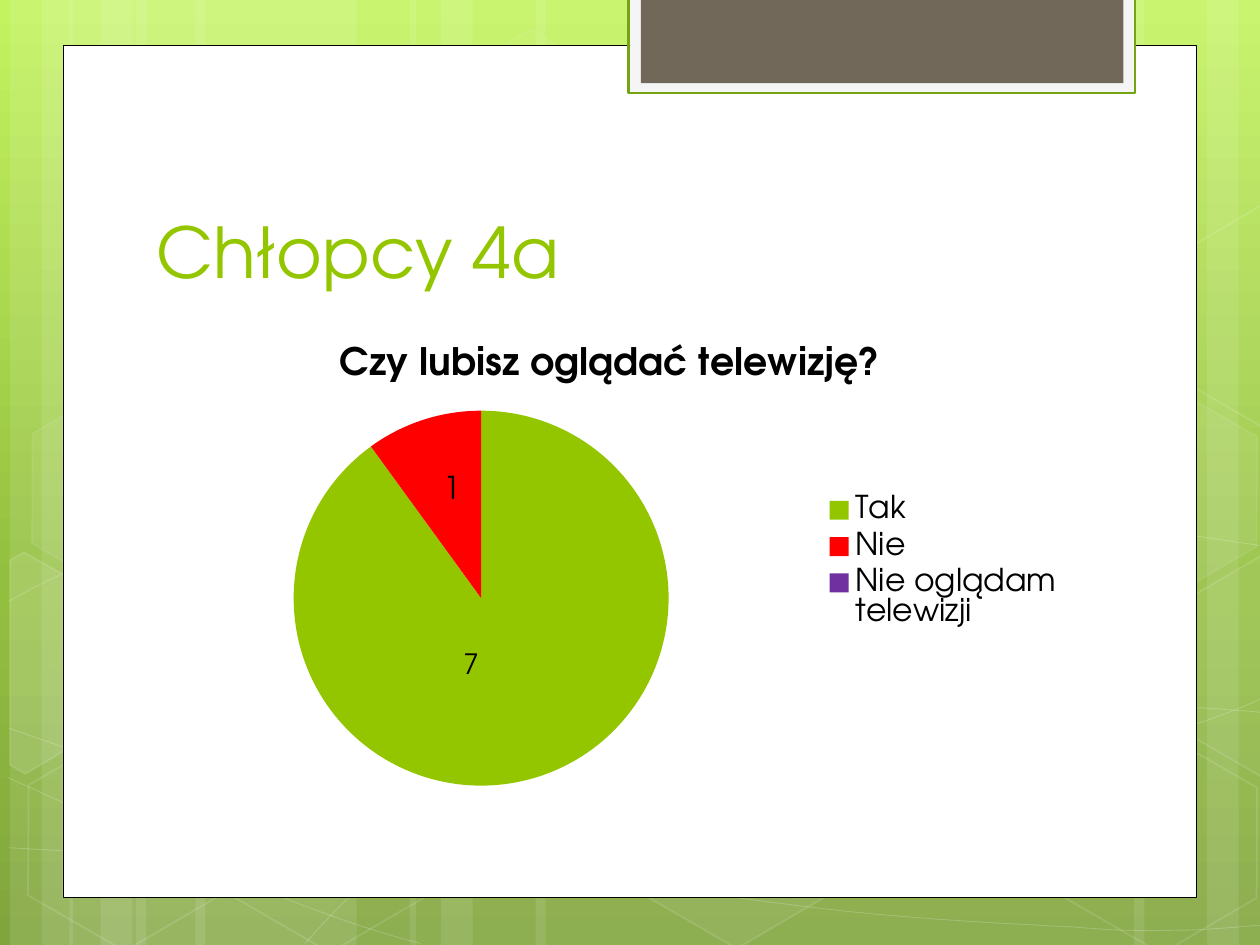
"""Build the "Chłopcy 4a" survey slide with its pie chart."""
from copy import deepcopy
from dataclasses import dataclass

from lxml.etree import SubElement
from pptx import Presentation
from pptx.chart.data import CategoryChartData
from pptx.dml.color import RGBColor
from pptx.enum.chart import XL_CHART_TYPE as ChartType, XL_LEGEND_POSITION as LegendPosition
from pptx.enum.shapes import MSO_SHAPE as Preset
from pptx.enum.text import MSO_ANCHOR as Anchor, PP_ALIGN as Align
from pptx.oxml.ns import qn
from pptx.util import Cm, Pt


@dataclass(frozen=True)
class Theme:
    font: str = "TeX Gyre Adventor"
    accent: str = "94C600"
    black: str = "000000"
    white: str = "FFFFFF"
    title_size: float = 40
    question_size: float = 21.6
    body_size: float = 18
    backdrop: tuple = ((0, "C3F35F"), (0.62, "93BF3F"), (1, "81A53E"))


THEME = Theme()
WIDTH, HEIGHT = 25.4, 19.05

TITLE = "Chłopcy 4a"
TITLE_BOX = (2.9, 2.84, 19.51, 3.18)
QUESTION = "Czy lubisz oglądać telewizję?"
ANSWERS = [
    ("Tak", 90, THEME.accent),
    ("Nie", 10, "FF0000"),
    ("Nie oglądam telewizji", 0, "7030A0"),
]
CHART_BOX = (2.9, 6.45, 18.82, 9.75)
PIE_BOX = (3.02, 1.83, 7.56, 7.56)
LEGEND_BOX = (13.67, 3.41, 4.89, 2.93)
COUNTS = [("7", 16, (9.09, 12.9, 3.61, 0.94)), ("1", 18, (8.69, 9.32, 2.34, 1.07))]

PANELS = [
    ((1.27, 0.91, 22.86, 17.19), THEME.white, (THEME.black, 0.5)),
    ((12.67, -0.05, 10.21, 1.93), "F5F5F5", ("74A510", 1.25)),
    ((12.92, -0.05, 9.73, 1.73), "71685A", None),
]
BANDS = [
    (2.74, 4.45), (0.2, 1.27), (0.84, 2.11), (3.94, 4.45), (1.4, 1.27), (2.03, 2.11),
    (18.62, 4.45), (24.33, 1.27), (22.86, 2.11), (10.8, 7.82), (8.26, 1.27), (8.89, 2.11),
]
BAND_ALPHA, CURVE_ALPHA = 10, 20
HEXAGON_SIZE = (4.45, 3.86)
HEXAGONS = [
    (8.48, 0.91, 4, 8), (12.62, 14.96, 6, 12), (0.28, 15.01, 0, 12), (0.36, 7.92, 7, 8),
    (4.42, 15.04, 0, 12), (21.18, 15.06, 0, 12), (21.18, 7.98, 7, 8),
]
CUT_HEXAGONS = [
    ([(0.2, 11.3), (0.48, 11.13), (2.44, 12.24), (2.41, 14.48), (0.51, 15.6), (0.2, 15.42)], 10),
    ([(23.52, 12.32), (25.43, 11.2), (25.63, 11.33), (25.63, 15.57), (25.45, 15.67), (23.52, 14.55)], 4),
    ([(23.52, 5.26), (25.43, 4.14), (25.65, 4.27), (25.63, 8.51), (25.45, 8.61), (23.52, 7.49)], 0),
]
CURVES = [
    [(0.18, 17.09), (1.55, 17.17), (2.92, 17.25), (4.83, 17.22), (6.73, 17.2), (9.09, 17.15),
     (11.63, 16.89), (14.17, 16.64), (17.78, 16.15), (20.12, 15.67), (22.43, 15.19),
     (24.82, 14.43), (25.58, 14)],
    [(0.18, 12.12), (0.91, 11.71), (1.65, 11.33), (3.07, 10.95), (4.52, 10.57), (6.58, 10.01),
     (8.81, 9.83), (11.07, 9.65), (13.82, 9.63), (16.61, 9.83), (19.41, 10.03),
     (24.05, 10.82), (25.58, 11.02)],
    [(0.15, 15.67), (3.23, 17.07), (6.27, 18.47), (8.48, 19.02)],
    [(0.18, 14.68), (0.97, 14.96), (1.78, 15.24), (3.25, 15.65), (4.72, 16.03), (6.93, 16.66),
     (9.07, 17.09), (11.18, 17.53), (13.84, 17.98), (15.95, 18.24), (18.06, 18.52),
     (20.32, 18.62), (21.67, 18.69), (22.99, 18.8), (23.34, 18.75), (24, 18.75),
     (24.66, 18.72), (25.12, 18.67), (25.58, 18.64)],
    [(6.15, 19.02), (6.6, 18.52), (7.06, 18.01), (7.67, 17.55), (8.28, 17.09), (9.14, 16.59),
     (9.86, 16.23), (10.57, 15.88), (11, 15.72), (11.94, 15.47), (12.85, 15.21),
     (14.55, 14.86), (15.44, 14.68), (16.36, 14.5), (16.48, 14.5), (17.27, 14.45),
     (18.06, 14.38), (19.3, 14.3), (20.17, 14.27), (21.06, 14.25), (22.5, 14.27),
     (22.5, 14.27), (23.07, 14.27), (23.64, 14.27), (24.21, 14.27), (24.66, 14.3),
     (25.1, 14.33), (25.32, 14.35), (25.48, 14.38), (25.53, 14.35), (25.55, 14.38)],
]


def cm(lengths):
    return [Cm(length) for length in lengths]


def paint(fill, color, alpha=100):
    fill.solid()
    fill.fore_color.rgb = RGBColor.from_string(color)
    if alpha < 100:
        SubElement(fill.fore_color._xFill[0], qn("a:alpha"), val=str(alpha * 1000))


def dress(shape, fill=None, alpha=100, line=None, line_alpha=100):
    shape.shadow.inherit = False
    if fill and alpha:
        paint(shape.fill, fill, alpha)
    else:
        shape.fill.background()
    if line:
        color, width = line
        paint(shape.line.fill, color, line_alpha)
        shape.line.width = Pt(width)
    else:
        shape.line.fill.background()


def set_font(font, size, color=THEME.black, bold=False):
    font.name, font.size, font.bold = THEME.font, Pt(size), bold
    font.color.rgb = RGBColor.from_string(color)


def add_outline(shapes, points, close):
    start, *rest = [cm(point) for point in points]
    builder = shapes.build_freeform(*start)
    builder.add_line_segments(rest, close=close)
    return builder.convert_to_shape()


def add_curve(shapes, points):
    curve = add_outline(shapes, points, False)
    segments = list(curve.element.iter(qn("a:lnTo")))
    for first in range(0, len(segments), 3):
        bezier = segments[first].makeelement(qn("a:cubicBezTo"))
        segments[first].addprevious(bezier)
        for segment in segments[first:first + 3]:
            bezier.append(segment[0])
            segment.getparent().remove(segment)
    return curve


def add_backdrop(slide):
    layout = slide.slide_layout
    fill = layout.slide_master.background.fill
    fill.gradient()
    fill.gradient_angle = 270
    stop_list = layout.slide_master.element.find(".//" + qn("a:gsLst"))
    stop_list.append(deepcopy(stop_list[-1]))
    for stop, (position, color) in zip(fill.gradient_stops, THEME.backdrop):
        stop.position = position
        stop.color.rgb = RGBColor.from_string(color)

    group, white = slide.shapes.add_group_shape(), THEME.white
    shapes = group.shapes
    for left, width in BANDS:
        dress(shapes.add_shape(Preset.RECTANGLE, *cm((left, 0, width, HEIGHT))), white, BAND_ALPHA)
    for points in CURVES:
        dress(add_curve(shapes, points), line=(white, 0.5), line_alpha=CURVE_ALPHA)
    for left, top, alpha, line_alpha in HEXAGONS:
        hexagon = shapes.add_shape(Preset.HEXAGON, *cm((left, top, *HEXAGON_SIZE)))
        hexagon.adjustments[0] = 0.285
        hexagon.rotation = 30
        dress(hexagon, white, alpha, (white, 1), line_alpha)
    for points, alpha in CUT_HEXAGONS:
        dress(add_outline(shapes, points, True), white, alpha, (white, 1), 12)
    panels = [slide.shapes.add_shape(Preset.RECTANGLE, *cm(box)) for box, _, _ in PANELS]
    for panel, (_, color, line) in zip(panels, PANELS):
        dress(panel, color, line=line)

    layout_title, *footers = layout.placeholders
    for footer in footers:
        footer.element.getparent().remove(footer.element)
    for part in (group, *panels):
        layout_title.element.addprevious(part.element)


def add_title(slide):
    title = slide.shapes.title
    title.left, title.top, title.width, title.height = cm(TITLE_BOX)
    title.text_frame.text = TITLE
    title.text_frame.vertical_anchor = Anchor.BOTTOM
    heading = title.text_frame.paragraphs[0]
    heading.alignment = Align.LEFT
    set_font(heading.font, THEME.title_size, THEME.accent)


def place_part(chart, tag, index, box, target=()):
    part = chart.element.find(".//" + qn(tag))
    for old in part.findall(qn("c:layout")):
        part.remove(old)
    layout = part.makeelement(qn("c:layout"))
    part.insert(index, layout)
    manual = SubElement(layout, qn("c:manualLayout"))
    shares = [length / whole for length, whole in zip(box, CHART_BOX[2:] * 2)]
    for name, value in (*target, ("xMode", "edge"), ("yMode", "edge"), *zip("xywh", shares)):
        SubElement(manual, qn("c:" + name), val=str(value))


def add_pie(slide):
    answers = CategoryChartData()
    answers.categories = [name for name, _, _ in ANSWERS]
    answers.add_series(QUESTION, [value for _, value, _ in ANSWERS])
    chart = slide.shapes.add_chart(ChartType.PIE, *cm(CHART_BOX), answers).chart
    set_font(chart.font, THEME.body_size)
    chart.has_title = True
    chart.chart_title.text_frame.text = QUESTION
    set_font(chart.chart_title.text_frame.paragraphs[0].font, THEME.question_size, bold=True)
    chart.has_legend = True
    chart.legend.position = LegendPosition.RIGHT
    chart.legend.include_in_layout = False
    set_font(chart.legend.font, THEME.body_size)
    pie = chart.plots[0]
    pie.vary_by_categories = True
    for index, (_, _, color) in enumerate(ANSWERS):
        paint(pie.series[0].points[index].format.fill, color)
    place_part(chart, "c:plotArea", 0, PIE_BOX, [("layoutTarget", "inner")])
    place_part(chart, "c:legend", 1, LEGEND_BOX)


def add_counts(slide):
    for count, size, box in COUNTS:
        frame = slide.shapes.add_textbox(*cm(box)).text_frame
        frame.word_wrap = True
        frame.text = count
        set_font(frame.paragraphs[0].font, size)


def main():
    deck = Presentation()
    deck.slide_width, deck.slide_height = cm((WIDTH, HEIGHT))
    slide = deck.slides.add_slide(deck.slide_layouts[5])
    for add_part in (add_backdrop, add_title, add_pie, add_counts):
        add_part(slide)
    deck.save("out.pptx")


if __name__ == "__main__":
    main()
